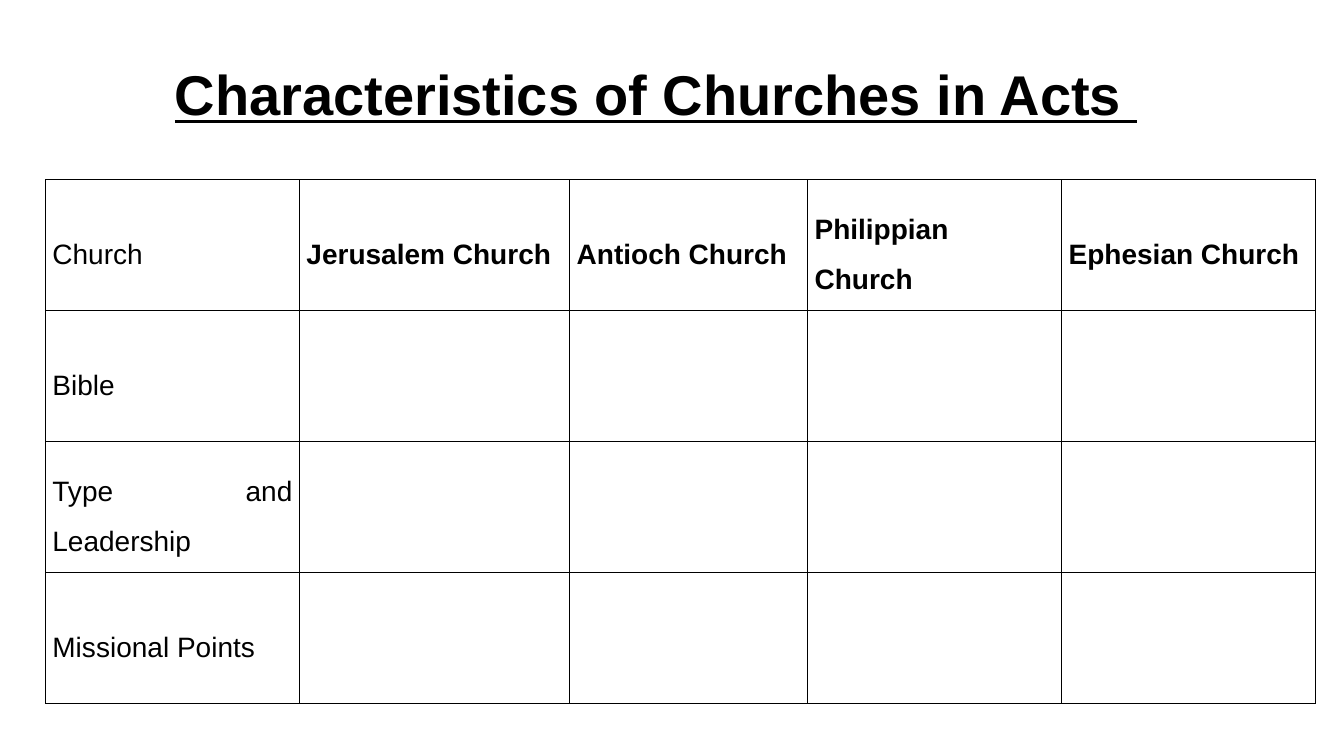
import pptx
import pptx.dml.color
import pptx.enum.text
import pptx.util
from lxml import etree
from pptx.oxml.ns import qn

# Content
TITLE = "Characteristics of Churches in Acts "
CHURCHES = ["Jerusalem Church", "Antioch Church", "Philippian Church", "Ephesian Church"]
TOPICS = ["Bible", "Type and Leadership", "Missional Points"]
ROWS = [["Church", *CHURCHES]] + [[topic] + [""] * len(CHURCHES) for topic in TOPICS]

# Layout in inches
SLIDE_SIZE = (13.33, 7.5)
TITLE_BOX = (0.67, 0.3, 11.67, 1.25)
TABLE_LEFT, TABLE_TOP = 0.45, 1.78
COLUMN_WIDTHS = [2.52, 2.68, 2.36, 2.52, 2.52]
ROW_HEIGHT = 1.3
CELL_MARGIN_X, CELL_MARGIN_Y = 0.07, 0.02
BORDER_POINTS = 0.28

FONT = "Arial"
COLORS = {"ink": "000000", "paper": "FFFFFF"}

Inches = pptx.util.Inches
Alignment = pptx.enum.text.PP_ALIGN
Anchor = pptx.enum.text.MSO_ANCHOR


def color(name):
    return pptx.dml.color.RGBColor.from_string(COLORS[name])


def format_font(font, size, bold, underline=False):
    font.name = FONT
    font.size = pptx.util.Pt(size)
    font.bold = bold
    font.underline = underline
    font.color.rgb = color("ink")


def add_borders(cell):
    properties = cell._tc.get_or_add_tcPr()
    for side in ("lnL", "lnR", "lnT", "lnB"):
        line = etree.SubElement(properties, qn(f"a:{side}"),
                                w=str(pptx.util.Pt(BORDER_POINTS)))
        fill = etree.SubElement(line, qn("a:solidFill"))
        etree.SubElement(fill, qn("a:srgbClr"), val=COLORS["ink"])


def fill_cell(cell, text, bold):
    add_borders(cell)
    cell.fill.solid()
    cell.fill.fore_color.rgb = color("paper")
    cell.vertical_anchor = Anchor.MIDDLE
    cell.margin_left = cell.margin_right = Inches(CELL_MARGIN_X)
    cell.margin_top = cell.margin_bottom = Inches(CELL_MARGIN_Y)
    cell.text_frame.text = text
    paragraph = cell.text_frame.paragraphs[0]
    paragraph.alignment = Alignment.JUSTIFY
    paragraph.line_spacing = 1.6
    for run in paragraph.runs:
        format_font(run.font, 20, bold)


def add_title(slide):
    title = slide.shapes.add_textbox(*map(Inches, TITLE_BOX))
    frame = title.text_frame
    frame.word_wrap = True
    frame.vertical_anchor = Anchor.MIDDLE
    frame.text = TITLE
    paragraph = frame.paragraphs[0]
    paragraph.alignment = Alignment.CENTER
    format_font(paragraph.runs[0].font, 40, True, underline=True)


def add_church_table(slide):
    size = (sum(COLUMN_WIDTHS), ROW_HEIGHT * len(ROWS))
    table = slide.shapes.add_table(
        len(ROWS), len(COLUMN_WIDTHS),
        *map(Inches, (TABLE_LEFT, TABLE_TOP, *size))).table
    table.first_row = table.horz_banding = False
    for column, width in zip(table.columns, COLUMN_WIDTHS):
        column.width = Inches(width)
    for row_index, row in enumerate(ROWS):
        table.rows[row_index].height = Inches(ROW_HEIGHT)
        for column_index, text in enumerate(row):
            # Only the church names are bold
            fill_cell(table.cell(row_index, column_index), text, column_index > 0)


def main():
    presentation = pptx.Presentation()
    presentation.slide_width, presentation.slide_height = map(Inches, SLIDE_SIZE)
    slide = presentation.slides.add_slide(presentation.slide_layouts[6])
    add_title(slide)
    add_church_table(slide)
    presentation.save("out.pptx")


if __name__ == "__main__":
    main()
